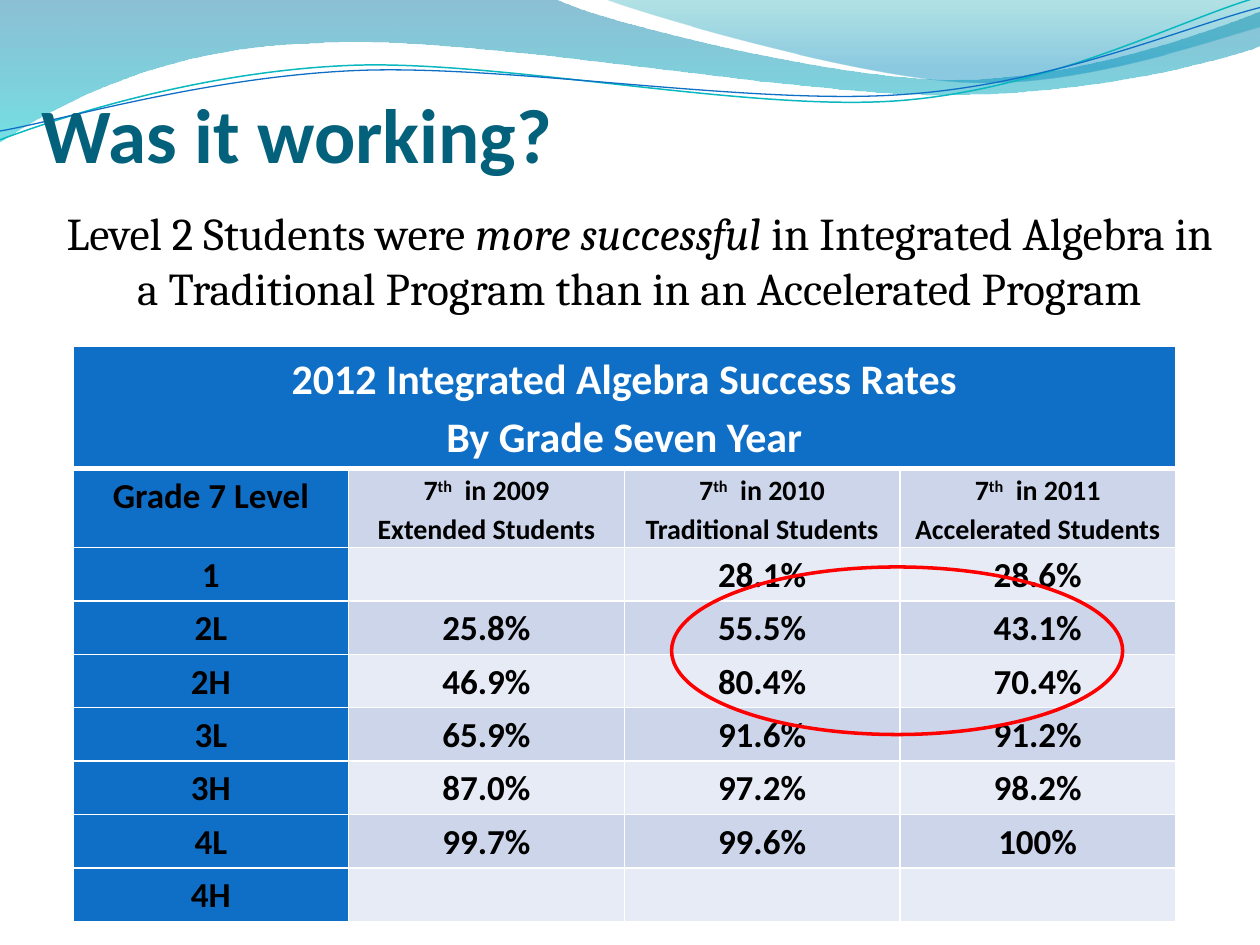
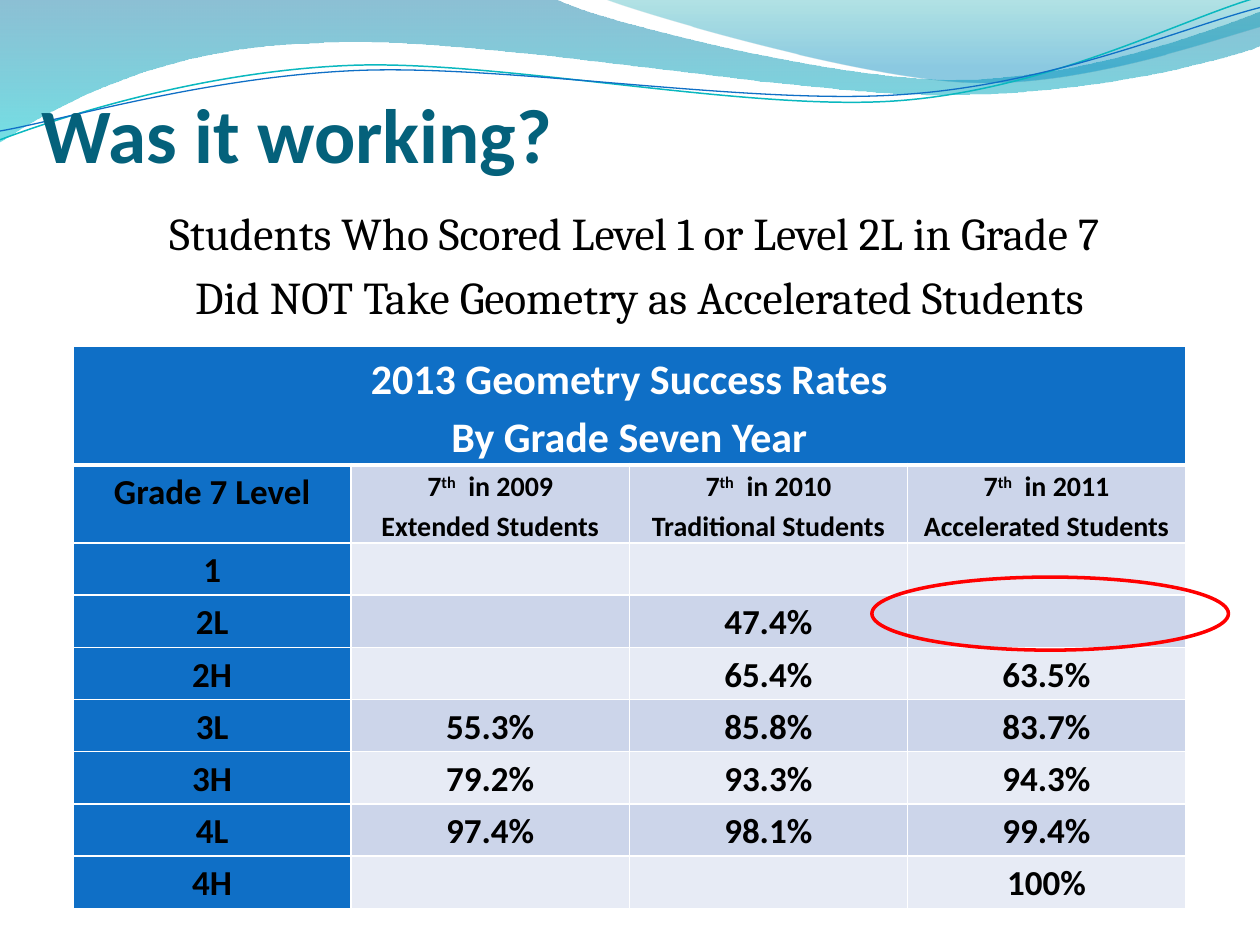
from lxml import etree
from pptx import Presentation
from pptx.dml.color import RGBColor
from pptx.enum.shapes import MSO_SHAPE
from pptx.enum.text import MSO_ANCHOR, PP_ALIGN
from pptx.oxml.ns import qn
from pptx.util import Inches, Pt

CENTER, LEFT = PP_ALIGN.CENTER, PP_ALIGN.LEFT
TOP, BOTTOM = MSO_ANCHOR.TOP, MSO_ANCHOR.BOTTOM
OVAL = MSO_SHAPE.OVAL

WHITE = RGBColor(0xFF, 0xFF, 0xFF)
BLACK = RGBColor(0x00, 0x00, 0x00)
RED = RGBColor(0xFF, 0x00, 0x00)
BLUE = RGBColor(0x0F, 0x6F, 0xC6)
TEAL = RGBColor(0x0A, 0xB8, 0xBF)
TITLE_BLUE = RGBColor(0x04, 0x61, 0x7B)
BAND_DARK = RGBColor(0xCC, 0xD5, 0xEA)
BAND_LIGHT = RGBColor(0xE7, 0xEB, 0xF5)
WAVE_BLUE = RGBColor(0x00, 0x74, 0xA1)
WAVE_CYAN = RGBColor(0x00, 0xC6, 0xCF)
CREST_GREEN = RGBColor(0x00, 0xA1, 0xA9)
CREST_BLUE = RGBColor(0x00, 0x8B, 0xBF)

HEAD_FONT, BODY_FONT = "Calibri", "Cambria"

WAVE = [(0, 0), (4.4, -0.01), (4.76, 0.17, 6.64, 0.63, 7.58, 0.63),
        (8.53, 0.63, 9.58, 0.26, 10, 0.09), (10.01, 0.36),
        (9.83, 0.44, 8.7, 0.76, 7.46, 0.75), (6.22, 0.75, 3.82, 0.28, 2.57, 0.34),
        (1.29, 0.36, 0.46, 0.83, -0.01, 1.13), (0, 0)]
CREST = [(4.79, -0.01), (5.09, 0.11, 6.82, 0.62, 7.69, 0.65),
         (8.56, 0.69, 9.61, 0.32, 10, 0.21), (10, 0), (4.79, -0.01)]
TEAL_LINE = [(0, 1.11), (0.48, 0.93, 1.58, 0.57, 2.77, 0.52),
             (3.95, 0.47, 5.93, 0.89, 7.13, 0.8), (8.33, 0.71, 9.38, 0.15, 9.98, -0.02)]
BLUE_LINE = [(0, 1.04), (0.47, 0.96, 1.64, 0.61, 2.83, 0.56),
             (4.03, 0.51, 5.97, 0.84, 7.17, 0.75), (8.36, 0.67, 9.41, 0.21, 10, 0.06)]

GROUPS = [("2009", "Extended"), ("2010", "Traditional"), ("2011", "Accelerated")]
ALGEBRA_RATES = [
    ("1", "", "28.1%", "28.6%"),
    ("2L", "25.8%", "55.5%", "43.1%"),
    ("2H", "46.9%", "80.4%", "70.4%"),
    ("3L", "65.9%", "91.6%", "91.2%"),
    ("3H", "87.0%", "97.2%", "98.2%"),
    ("4L", "99.7%", "99.6%", "100%"),
    ("4H", "", "", ""),
]
GEOMETRY_RATES = [
    ("1", "", "", ""),
    ("2L", "", "47.4%", ""),
    ("2H", "", "65.4%", "63.5%"),
    ("3L", "55.3%", "85.8%", "83.7%"),
    ("3H", "79.2%", "93.3%", "94.3%"),
    ("4L", "97.4%", "98.1%", "99.4%"),
    ("4H", "", "", "100%"),
]


def add_outline(s, segments, closed):
    """Draw a freeform whose six-number segments are cubic curves."""
    ends = [(Inches(seg[-2]), Inches(seg[-1])) for seg in segments]
    builder = s.shapes.build_freeform(*ends[0])
    builder.add_line_segments(ends[1:], close=closed)
    sp = builder.convert_to_shape()
    sp.shadow.inherit = False
    lines = list(sp._element.spPr.iter(qn("a:lnTo")))
    for line, seg in zip(lines, segments[1:]):
        if len(seg) == 6:
            line.tag = qn("a:cubicBezTo")
            for i in (0, 2):
                pt = etree.Element(qn("a:pt"), x=str(Inches(seg[i]) - sp.left),
                                   y=str(Inches(seg[i + 1]) - sp.top))
                line.insert(i // 2, pt)
    return sp


def add_wave(s, segments, stops):
    """Add a band with a translucent vertical gradient."""
    sp = add_outline(s, segments, True)
    sp.line.fill.background()
    sp.fill.gradient()
    sp.fill.gradient_angle = 270
    for stop, (position, color, _) in zip(sp.fill.gradient_stops, stops):
        stop.position = position
        stop.color.rgb = color
    colors = sp._element.spPr.find(qn("a:gradFill")).iter(qn("a:srgbClr"))
    for color, (_, _, opacity) in zip(colors, stops):
        etree.SubElement(color, qn("a:alpha")).set("val", str(opacity * 1000))


def add_wave_line(s, segments, color, width):
    """Add a thin open curve."""
    sp = add_outline(s, segments, False)
    sp.fill.background()
    sp.line.color.rgb = color
    sp.line.width = Pt(width)


def add_background(s):
    """Add the waves at the top of every slide."""
    add_wave(s, WAVE, [(0, WAVE_BLUE, 45), (1, WAVE_CYAN, 55)])
    add_wave(s, CREST, [(0, CREST_GREEN, 30), (0.8, CREST_BLUE, 45)])
    add_wave_line(s, TEAL_LINE, TEAL, 0.85)
    add_wave_line(s, BLUE_LINE, BLUE, 0.75)


def write(tf, paragraphs, size, font, color, bold=False, align=CENTER):
    """Write paragraphs of runs in one style and return the paragraphs."""
    for i, texts in enumerate(paragraphs):
        p = tf.add_paragraph() if i else tf.paragraphs[0]
        p.alignment = align
        for text in texts:
            r = p.add_run()
            r.text = text
            r.font.size, r.font.name, r.font.bold = Pt(size), font, bold
            r.font.color.rgb = color
    return tf.paragraphs


def add_text_box(s, top, height, anchor):
    """Add a wrapped text box of the common width and return its frame."""
    tf = s.shapes.add_textbox(Inches(0.33), Inches(top), Inches(9.5), Inches(height)).text_frame
    tf.word_wrap = True
    tf.vertical_anchor = anchor
    return tf


def add_title(s):
    """Add the title that the slides share."""
    tf = add_text_box(s, 0.42, 1, BOTTOM)
    tf.margin_left = tf.margin_right = tf.margin_bottom = 0
    write(tf, [["Was it working?"]], 44, HEAD_FONT, TITLE_BLUE, True, LEFT)


def add_statement(s, paragraphs, italic=""):
    """Add the centred statement, with one run in italics if named."""
    tf = add_text_box(s, 1.58, 5.92, TOP)
    for p in write(tf, paragraphs, 26, BODY_FONT, BLACK):
        p.space_before = Pt(5.2)
        for r in p.runs:
            r.font.italic = r.text == italic


def set_borders(cell, bottom):
    """Give a cell white borders, with its own bottom width."""
    tcPr = cell._tc.get_or_add_tcPr()
    for tag, width in (("a:lnL", 1), ("a:lnR", 1), ("a:lnT", 1), ("a:lnB", bottom)):
        ln = etree.SubElement(tcPr, qn(tag), w=str(Pt(width)))
        fill = etree.SubElement(ln, qn("a:solidFill"))
        etree.SubElement(fill, qn("a:srgbClr"), val=str(WHITE))


def fill_cell(cell, paragraphs, fill, size, color=BLACK, bottom=1):
    """Set the borders, fill and text of a table cell."""
    set_borders(cell, bottom)
    cell.fill.solid()
    cell.fill.fore_color.rgb = fill
    cell.margin_left = cell.margin_right = Inches(0.07)
    cell.margin_top = cell.margin_bottom = 0
    for p in write(cell.text_frame, paragraphs, size, HEAD_FONT, color, True):
        p.line_spacing = 1.15


def add_rates_table(s, subject, rates, width, height, head_heights):
    """Add the table of success rates by level and student group."""
    rows, cols = len(rates) + 2, len(GROUPS) + 1
    frame = s.shapes.add_table(rows, cols, Inches(0.58), Inches(2.75),
                               Inches(width), Inches(height))
    table = frame.table
    for col in table.columns:
        col.width = Inches(width / cols)
    level_height = (height - sum(head_heights)) / len(rates)
    for row, row_height in zip(table.rows, [*head_heights, *[level_height] * len(rates)]):
        row.height = Inches(row_height)

    table.cell(0, 0).merge(table.cell(0, cols - 1))
    heading = [[f"{subject} Success Rates"], ["By Grade Seven Year"]]
    fill_cell(table.cell(0, 0), heading, BLUE, 24, WHITE, 3)
    for c in range(1, cols):
        set_borders(table.cell(0, c), 3)

    fill_cell(table.cell(1, 0), [["Grade 7 Level"]], BLUE, 20)
    for c, (year, group) in enumerate(GROUPS, 1):
        cell = table.cell(1, c)
        fill_cell(cell, [["7", "th", f"  in {year}"], [f"{group} Students"]], BAND_DARK, 16)
        ordinal = cell.text_frame.paragraphs[0].runs[1]
        ordinal._r.get_or_add_rPr().set("baseline", "30000")

    for i, values in enumerate(rates):
        band = BAND_DARK if i % 2 else BAND_LIGHT
        for c, value in enumerate(values):
            fill_cell(table.cell(i + 2, c), [[value]] if value else [], band if c else BLUE, 20)


def add_ring(s, left, top, width, height):
    """Add a red ring around the cells to notice."""
    sp = s.shapes.add_shape(OVAL, Inches(left), Inches(top), Inches(width), Inches(height))
    sp.shadow.inherit = False
    sp.fill.background()
    sp.line.color.rgb = RED
    sp.line.width = Pt(2)


def add_slide(prs):
    """Add a blank slide with the shared waves."""
    s = prs.slides.add_slide(prs.slide_layouts[6])
    add_background(s)
    return s


def main():
    """Build and save the two slides."""
    prs = Presentation()
    prs.slide_width, prs.slide_height = Inches(10), Inches(7.5)

    s = add_slide(prs)
    add_rates_table(s, "2012 Integrated Algebra", ALGEBRA_RATES, 8.75, 4.55, (0.97, 0.61))
    add_title(s)
    add_statement(s, [["Level 2 Students were ", "more successful ",
                       "in Integrated Algebra in a Traditional Program "
                       "than in an Accelerated Program"]], "more successful ")
    add_ring(s, 5.33, 4.5, 3.58, 1.33)

    s = add_slide(prs)
    add_title(s)
    add_statement(s, [["Students Who Scored Level 1 or Level 2L in Grade 7 "],
                      ["Did NOT Take Geometry as Accelerated Students"]])
    add_rates_table(s, "2013 Geometry", GEOMETRY_RATES, 8.83, 4.46, (0.94, 0.62))
    add_ring(s, 6.92, 4.58, 2.83, 0.58)

    prs.save("out.pptx")


if __name__ == "__main__":
    main()
